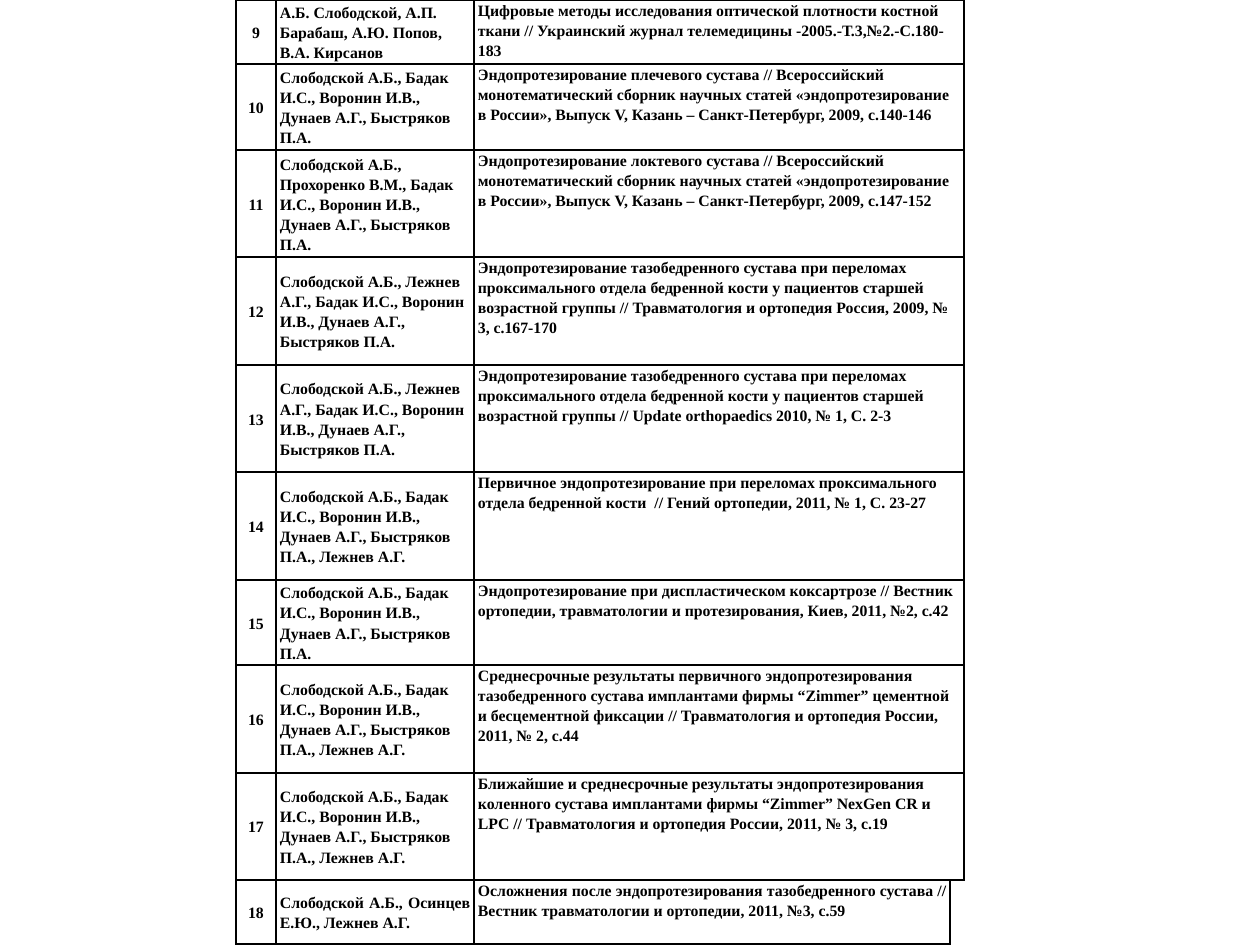
"""Build a slide with a numbered table of publications."""
from lxml import etree
from pptx import Presentation
from pptx.dml.color import RGBColor
from pptx.enum.text import MSO_ANCHOR, PP_ALIGN
from pptx.oxml.ns import qn
from pptx.util import Pt

LEFT, MID, JUST = PP_ALIGN.LEFT, PP_ALIGN.CENTER, PP_ALIGN.JUSTIFY
TOP, CENTER = MSO_ANCHOR.TOP, MSO_ANCHOR.MIDDLE
PX = 914400 // 126
COLORS = {"ink": "000000"}
FONT = "Times New Roman"

CORE = "Слободской А.Б., Бадак И.С., Воронин И.В., Дунаев А.Г., Быстряков П.А."
FULL = CORE + ", Лежнев А.Г."
HIP = "Слободской А.Б., Лежнев А.Г., Бадак И.С., Воронин И.В., Дунаев А.Г., Быстряков П.А."
BOOK = ("Всероссийский монотематический сборник научных статей "
        "«эндопротезирование в России», Выпуск V, Казань – Санкт-Петербург, 2009, ")
OLD = ("Эндопротезирование тазобедренного сустава при переломах проксимального отдела "
       "бедренной кости у пациентов старшей возрастной группы // ")

FIRST = 9
ROWS = [
    (64, "А.Б. Слободской, А.П. Барабаш, А.Ю. Попов, В.А. Кирсанов",
     "Цифровые методы исследования оптической плотности костной ткани // "
     "Украинский журнал телемедицины -2005.-Т.3,№2.-С.180-183"),
    (86, CORE, "Эндопротезирование плечевого сустава // " + BOOK + "с.140-146"),
    (107, "Слободской А.Б., Прохоренко В.М., Бадак И.С., Воронин И.В., "
          "Дунаев А.Г., Быстряков П.А.",
     "Эндопротезирование локтевого сустава // " + BOOK + "с.147-152"),
    (108, HIP, OLD + "Травматология и ортопедия Россия, 2009, № 3, с.167-170"),
    (107, HIP, OLD + "Update orthopaedics 2010, № 1, С. 2-3"),
    (108, FULL,
     "Первичное эндопротезирование при переломах проксимального отдела бедренной кости  // "
     "Гений ортопедии, 2011, № 1, С. 23-27"),
    (85, CORE,
     "Эндопротезирование при диспластическом коксартрозе // "
     "Вестник ортопедии, травматологии и протезирования, Киев, 2011, №2, с.42"),
    (108, FULL,
     "Среднесрочные результаты первичного эндопротезирования тазобедренного сустава "
     "имплантами фирмы “Zimmer” цементной и бесцементной фиксации // "
     "Травматология и ортопедия России, 2011, № 2, с.44"),
    (107, FULL,
     "Ближайшие и среднесрочные результаты эндопротезирования коленного сустава "
     "имплантами фирмы “Zimmer” NexGen CR и LPC // "
     "Травматология и ортопедия России, 2011, № 3, с.19"),
    (64, "Слободской А.Б., Осинцев Е.Ю., Лежнев А.Г.",
     "Осложнения после эндопротезирования тазобедренного сустава // "
     "Вестник травматологии и ортопедии, 2011, №3, с.59"),
]
COLS = [40, 198, 476, 14]
X, Y = 236, 0


def frame(cell, sides):
    props = cell._tc.get_or_add_tcPr()
    for side in "LRTB":
        line = etree.SubElement(props, qn("a:ln" + side), w=str(Pt(1)))
        if side in sides:
            fill = etree.SubElement(line, qn("a:solidFill"))
            etree.SubElement(fill, qn("a:srgbClr"), val=COLORS["ink"])
        else:
            etree.SubElement(line, qn("a:noFill"))
    cell.fill.background()
    cell.margin_left = cell.margin_right = 4 * PX
    cell.margin_top = cell.margin_bottom = 0


def write(cell, text, align, anchor):
    cell.vertical_anchor = anchor
    para = cell.text_frame.paragraphs[0]
    para.alignment = align
    para.line_spacing = 1.15
    run = para.add_run()
    run.text = text
    font = run.font
    font.name, font.size, font.bold = FONT, Pt(9), True
    font.color.rgb = RGBColor.from_string(COLORS["ink"])


def main():
    deck = Presentation()
    deck.slide_width, deck.slide_height = 1260 * PX, 945 * PX
    slide = deck.slides.add_slide(deck.slide_layouts[6])
    high = sum(row[0] for row in ROWS)
    grid = slide.shapes.add_table(
        len(ROWS), len(COLS), X * PX, Y * PX, sum(COLS) * PX, high * PX).table
    grid.first_row = grid.horz_banding = False
    for col, wide in zip(grid.columns, COLS):
        col.width = wide * PX
    last = len(ROWS) - 1
    for i, (tall, names, work) in enumerate(ROWS):
        grid.rows[i].height = tall * PX
        for j in range(len(COLS)):
            frame(grid.cell(i, j), "LT" if (i, j) == (last, 3) else "LRTB")
        if i < last:
            grid.cell(i, 2).merge(grid.cell(i, 3))
        align = JUST if i == last else LEFT
        write(grid.cell(i, 0), str(FIRST + i), MID, CENTER)
        write(grid.cell(i, 1), names, align, CENTER)
        write(grid.cell(i, 2), work, align, TOP)
    deck.save("out.pptx")


if __name__ == "__main__":
    main()
